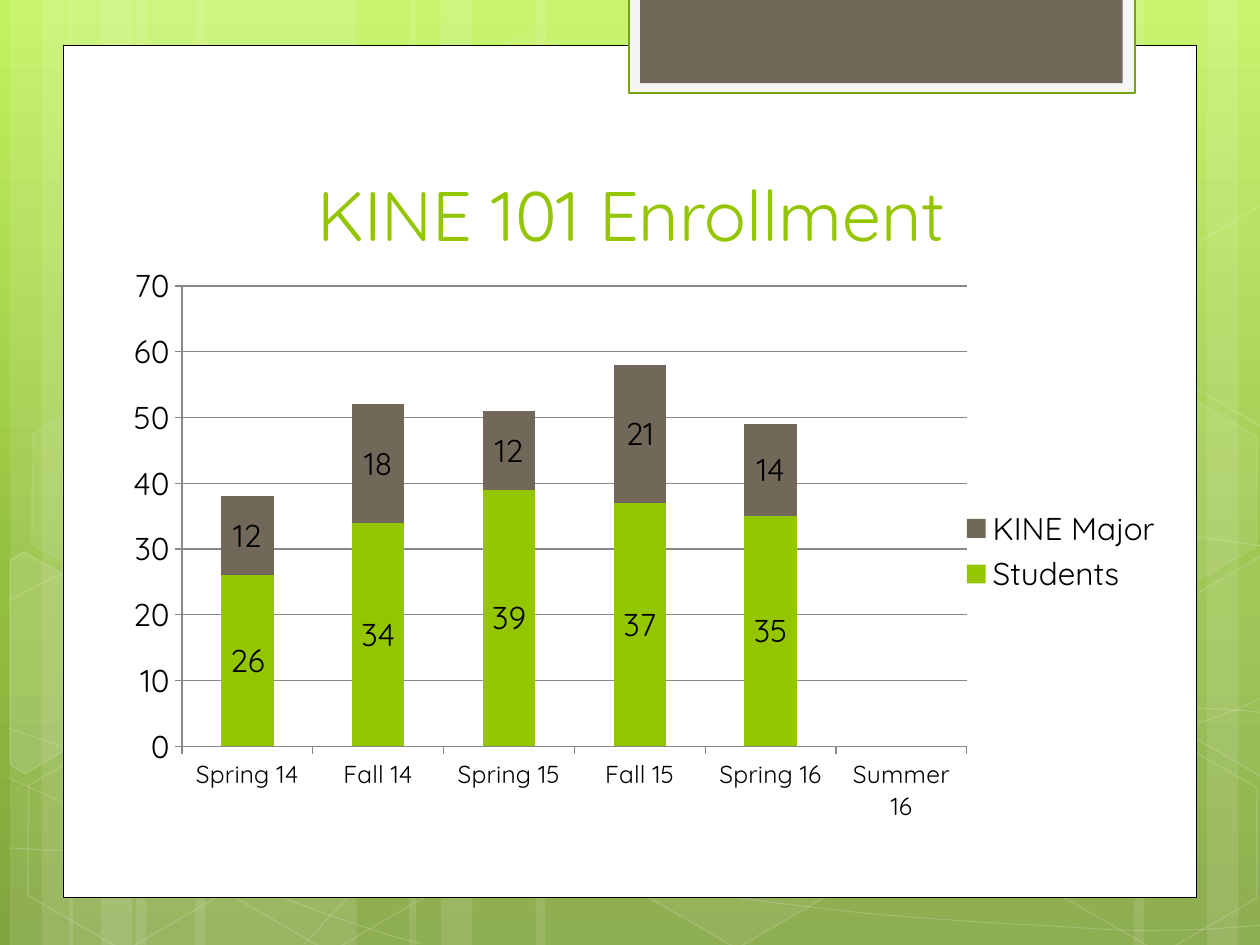
import copy
from dataclasses import dataclass
from typing import Optional

import pptx
import pptx.chart.data
import pptx.dml.color
import pptx.enum.chart
import pptx.enum.shapes
import pptx.enum.text
import pptx.oxml
import pptx.oxml.ns
import pptx.util
from pptx.util import Inches, Pt

RGBColor = pptx.dml.color.RGBColor
MSO_SHAPE = pptx.enum.shapes.MSO_SHAPE
qn = pptx.oxml.ns.qn

WHITE = RGBColor(0xFF, 0xFF, 0xFF)
BLACK = RGBColor(0, 0, 0)
GREEN = RGBColor(0x94, 0xC6, 0x00)
DARK_GREEN = RGBColor(0x74, 0xA5, 0x10)
BROWN = RGBColor(0x71, 0x68, 0x5A)
PALE_GRAY = RGBColor(0xF5, 0xF5, 0xF5)
GRID_GRAY = RGBColor(0x88, 0x88, 0x88)
BACKGROUND_STOPS = [(0, RGBColor(0xC3, 0xF3, 0x5F)), (0.62, RGBColor(0x93, 0xBF, 0x3F)),
                    (1, RGBColor(0x81, 0xA5, 0x3E))]
FONT = "Quicksand"


@dataclass
class Style:
    """Fill and line; opacities are percentages."""
    fill: Optional[RGBColor] = None
    line: Optional[RGBColor] = None
    width: float = 1
    fill_opacity: int = 100
    line_opacity: int = 100


@dataclass
class Hexagon:
    left: float
    top: float
    fill_opacity: int = 0
    line_opacity: int = 12


@dataclass
class CutHexagon:
    """A hexagon clipped by the edge of the slide."""
    points: list
    fill_opacity: int = 0


BANDS = [(1.08, 1.75), (0.08, 0.5), (0.33, 0.83), (1.55, 1.75), (0.55, 0.5), (0.8, 0.83),
         (7.33, 1.75), (9.58, 0.5), (9, 0.83), (4.25, 3.08), (3.25, 0.5), (3.5, 0.83)]

# Each curve is a start point followed by cubic Bézier triples.
CURVES = [
    [(0.07, 6.73), (0.61, 6.76), (1.15, 6.79), (1.9, 6.78), (2.65, 6.77), (3.58, 6.75),
     (4.58, 6.65), (5.58, 6.55), (7, 6.36), (7.92, 6.17), (8.83, 5.98), (9.77, 5.68),
     (10.07, 5.51)],
    [(0.07, 4.77), (0.36, 4.61), (0.65, 4.46), (1.21, 4.31), (1.78, 4.16), (2.59, 3.94),
     (3.47, 3.87), (4.36, 3.8), (5.44, 3.79), (6.54, 3.87), (7.64, 3.95), (9.47, 4.26),
     (10.07, 4.34)],
    [(0.06, 6.17), (1.27, 6.72), (2.47, 7.27), (3.34, 7.49)],
    [(0.07, 5.78), (0.38, 5.89), (0.7, 6), (1.28, 6.16), (1.86, 6.31), (2.73, 6.56),
     (3.57, 6.73), (4.4, 6.9), (5.45, 7.08), (6.28, 7.18), (7.11, 7.29), (8, 7.33),
     (8.53, 7.36), (9.05, 7.4), (9.19, 7.38), (9.45, 7.38), (9.71, 7.37), (9.89, 7.35),
     (10.07, 7.34)],
    [(2.42, 7.49), (2.6, 7.29), (2.78, 7.09), (3.02, 6.91), (3.26, 6.73), (3.6, 6.53),
     (3.88, 6.39), (4.16, 6.25), (4.33, 6.19), (4.7, 6.09), (5.06, 5.99), (5.73, 5.85),
     (6.08, 5.78), (6.44, 5.71), (6.49, 5.71), (6.8, 5.69), (7.11, 5.66), (7.6, 5.63),
     (7.94, 5.62), (8.29, 5.61), (8.86, 5.62), (8.86, 5.62), (8.86, 5.62), (9.53, 5.62),
     (9.53, 5.62), (9.71, 5.63), (9.88, 5.64), (9.97, 5.65), (10.06, 5.66), (10.03, 5.65),
     (10.06, 5.66)],
]

HEXAGONS = [
    Hexagon(3.34, 0.36, 4, 8),
    Hexagon(4.97, 5.89, 6),
    CutHexagon([(0.08, 4.45), (0.19, 4.38), (0.96, 4.82), (0.95, 5.7), (0.2, 6.14),
                (0.08, 6.07)], 10),
    Hexagon(0.11, 5.91),
    Hexagon(0.14, 3.12, 7, 8),
    Hexagon(1.74, 5.92),
    Hexagon(7.53, 4.53, 10),
    Hexagon(8.34, 5.93),
    Hexagon(8.34, 3.14, 7, 8),
    CutHexagon([(9.26, 4.85), (10.01, 4.41), (10.09, 4.46), (10.09, 6.13), (10.02, 6.17),
                (9.26, 5.73)], 4),
    CutHexagon([(9.26, 2.07), (10.01, 1.63), (10.1, 1.68), (10.09, 3.35), (10.02, 3.39),
                (9.26, 2.95)]),
]

CATEGORIES = ["Spring 14", "Fall 14", "Spring 15", "Fall 15", "Spring 16", "Summer 16"]
SERIES = [("Students", [26, 34, 39, 37, 35, None], GREEN),
          ("KINE Major", [12, 18, 12, 21, 14, None], BROWN)]


def paint(fill, color: Optional[RGBColor], opacity: int, holder) -> None:
    """Set a fill; holder is the XML element that contains it."""
    if color is None or opacity == 0:
        fill.background()
        return
    fill.solid()
    fill.fore_color.rgb = color
    if opacity < 100:
        holder.find(qn("a:solidFill")).find(qn("a:srgbClr")).append(pptx.oxml.parse_xml(
            f'<a:alpha {pptx.oxml.ns.nsdecls("a")} val="{opacity * 1000}"/>'))


def apply_style(shape, style: Style) -> None:
    shape.shadow.inherit = False
    properties = shape._element.spPr
    paint(shape.fill, style.fill, style.fill_opacity, properties)
    shape.line.width = Pt(style.width)
    paint(shape.line.fill, style.line, style.line_opacity, properties.find(qn("a:ln")))


def add_box(shapes, left: float, top: float, width: float, height: float, style: Style,
            kind=MSO_SHAPE.RECTANGLE):
    box = shapes.add_shape(kind, Inches(left), Inches(top), Inches(width), Inches(height))
    apply_style(box, style)
    return box


def add_outline(shapes, points: list, style: Style, closed: bool):
    start, *rest = [(Inches(x), Inches(y)) for x, y in points]
    builder = shapes.build_freeform(*start)
    builder.add_line_segments(rest, close=closed)
    outline = builder.convert_to_shape()
    apply_style(outline, style)
    return outline


def bend(outline) -> None:
    """Turn each three line segments into one cubic Bézier segment."""
    lines = list(outline._element.iter(qn("a:lnTo")))
    for i in range(0, len(lines), 3):
        curve = pptx.oxml.parse_xml(f'<a:cubicBezTo {pptx.oxml.ns.nsdecls("a")}/>')
        lines[i].addprevious(curve)
        for line in lines[i:i + 3]:
            curve.append(line[0])
            line.getparent().remove(line)


def add_background(slide) -> None:
    fill = slide.background.fill
    fill.gradient()
    fill.gradient_angle = 270
    stop_list = next(slide._element.iter(qn("a:gsLst")))
    stop_list.append(copy.deepcopy(stop_list[0]))
    for stop, (position, color) in zip(fill.gradient_stops, BACKGROUND_STOPS):
        stop.position = position
        stop.color.rgb = color


def add_backdrop(shapes):
    """Draw bands, curves and hexagons in one group."""
    backdrop = shapes.add_group_shape()
    for left, width in BANDS:
        add_box(backdrop.shapes, left, 0, width, 7.5, Style(WHITE, fill_opacity=10))
    for curve in CURVES:
        bend(add_outline(backdrop.shapes, curve, Style(None, WHITE, 0.5, line_opacity=20), False))
    for item in HEXAGONS:
        if isinstance(item, CutHexagon):
            add_outline(backdrop.shapes, item.points,
                        Style(WHITE, WHITE, 1, item.fill_opacity, 12), True)
        else:
            hexagon = add_box(backdrop.shapes, item.left, item.top, 1.75, 1.52,
                              Style(WHITE, WHITE, 1, item.fill_opacity, item.line_opacity),
                              MSO_SHAPE.HEXAGON)
            hexagon.adjustments[0] = 0.285
            hexagon.rotation = 30
    return backdrop


def decorate_master(slide, master) -> None:
    """Draw the decoration with the slide's shape tools, then hand it to the master."""
    decoration = [
        add_backdrop(slide.shapes),
        add_box(slide.shapes, 0.5, 0.36, 9, 6.76, Style(WHITE, BLACK, 0.5)),
        add_box(slide.shapes, 4.99, -0.02, 4.02, 0.76, Style(PALE_GRAY, DARK_GREEN, 1.25)),
        add_box(slide.shapes, 5.08, -0.02, 3.83, 0.68, Style(BROWN)),
    ]
    for position, part in enumerate(decoration, start=2):
        for identity in part._element.iter(qn("p:cNvPr")):
            identity.set("id", str(int(identity.get("id")) + 100))
        master.shapes._spTree.insert(position, part._element)


def format_title(title) -> None:
    title.left, title.top, title.width, title.height = map(Inches, (1.17, 0.83, 7.68, 1.25))
    title.text_frame.text = "KINE 101 Enrollment"
    title.text_frame.auto_size = pptx.enum.text.MSO_AUTO_SIZE.NONE
    title.text_frame.vertical_anchor = pptx.enum.text.MSO_ANCHOR.BOTTOM
    heading = title.text_frame.paragraphs[0]
    heading.alignment = pptx.enum.text.PP_ALIGN.CENTER
    heading.font.name, heading.font.size = FONT, Pt(40)
    heading.font.color.rgb = GREEN


def set_plot_layout(chart, **bounds: float) -> None:
    plot_area = chart._chartSpace.chart.plotArea
    for old in plot_area.findall(qn("c:layout")):
        plot_area.remove(old)
    sizes = "".join(f'<c:{tag} val="{value}"/>' for tag, value in
                    {"xMode": "edge", "yMode": "edge", **bounds}.items())
    plot_area.insert(0, pptx.oxml.parse_xml(
        f'<c:layout {pptx.oxml.ns.nsdecls("c")}><c:manualLayout>'
        f'<c:layoutTarget val="inner"/>{sizes}</c:manualLayout></c:layout>'))


def add_enrollment_chart(slide) -> None:
    data = pptx.chart.data.CategoryChartData()
    data.categories = CATEGORIES
    for name, values, _ in SERIES:
        data.add_series(name, values)
    chart = slide.shapes.add_chart(pptx.enum.chart.XL_CHART_TYPE.COLUMN_STACKED, Inches(0.75),
                                   Inches(2), Inches(8.58), Inches(4.75), data).chart
    chart.has_title = False
    chart.font.name, chart.font.size = FONT, Pt(18)
    chart.font.color.rgb = BLACK
    chart.has_legend = True
    chart.legend.position = pptx.enum.chart.XL_LEGEND_POSITION.RIGHT
    chart.legend.include_in_layout = False
    set_plot_layout(chart, x=0.081, y=0.057, w=0.726, h=0.769)

    counts, terms = chart.value_axis, chart.category_axis
    counts.has_major_gridlines = True
    terms.tick_labels.font.size = Pt(14)
    for axis in (counts, terms):
        axis.major_tick_mark = pptx.enum.chart.XL_TICK_MARK.OUTSIDE
    for part in (counts, terms, counts.major_gridlines):
        part.format.line.color.rgb = GRID_GRAY

    plot = chart.plots[0]
    plot.gap_width, plot.overlap, plot.vary_by_categories = 150, 100, False
    for series, (_, _, color) in zip(plot.series, SERIES):
        series.format.fill.solid()
        series.format.fill.fore_color.rgb = color
        series.data_labels.show_value = True


def main() -> None:
    deck = pptx.Presentation()
    deck.slide_width, deck.slide_height = Inches(10), Inches(7.5)
    slide = deck.slides.add_slide(deck.slide_layouts[5])
    add_background(slide)
    decorate_master(slide, deck.slide_master)
    format_title(slide.shapes.title)
    add_enrollment_chart(slide)
    deck.save("out.pptx")


if __name__ == "__main__":
    main()
